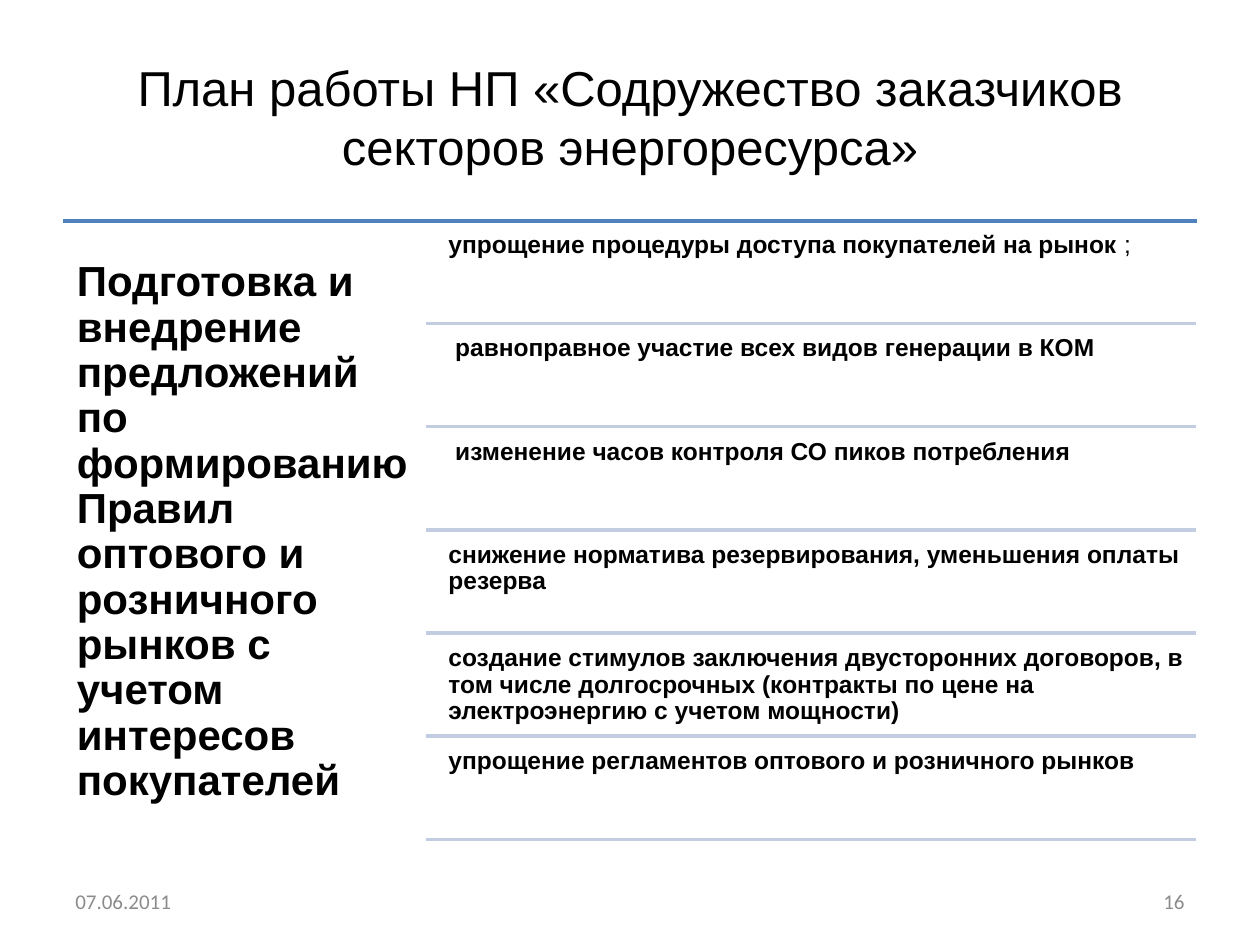
import pptx
import pptx.util
import pptx.dml.color
import pptx.enum.shapes
import pptx.enum.text
from lxml import etree

Cm = pptx.util.Cm
Pt = pptx.util.Pt
RGBColor = pptx.dml.color.RGBColor
PP_ALIGN = pptx.enum.text.PP_ALIGN
MSO_ANCHOR = pptx.enum.text.MSO_ANCHOR

BLACK = RGBColor(0x00, 0x00, 0x00)
GRAY = RGBColor(0x8C, 0x8C, 0x8C)
BLUE = RGBColor(0x4F, 0x81, 0xBD)
PALE_BLUE = RGBColor(0xC2, 0xCD, 0xE1)
DRAWING_NS = "http://schemas.openxmlformats.org/drawingml/2006/main"


def add_text(x, y, w, h, text, size, color=BLACK, font="Arial", bold=False,
             align=PP_ALIGN.LEFT, anchor=MSO_ANCHOR.MIDDLE, inset=(0.25, 0.13), spacing=None):
    sp = s.shapes.add_textbox(Cm(x), Cm(y), Cm(w), Cm(h))
    tf = sp.text_frame
    tf.word_wrap = True
    tf.vertical_anchor = anchor
    tf.margin_left = tf.margin_right = Cm(inset[0])
    tf.margin_top = tf.margin_bottom = Cm(inset[1])
    tf.text = text
    p = tf.paragraphs[0]
    p.alignment = align
    p.line_spacing = spacing
    r = p.runs[0]
    r.font.name = font
    r.font.size = Pt(size)
    r.font.bold = bold
    r.font.color.rgb = color
    return p


def add_rule(x1, x2, y, color):
    line = s.shapes.add_connector(pptx.enum.shapes.MSO_CONNECTOR.STRAIGHT,
                                  Cm(x1), Cm(y), Cm(x2), Cm(y))
    line.line.color.rgb = color
    line.line.width = Pt(2)
    etree.SubElement(line._element.spPr, "{%s}effectLst" % DRAWING_NS)


prs = pptx.Presentation()
prs.slide_width = Cm(25.4)
prs.slide_height = Cm(19.05)
s = prs.slides.add_slide(prs.slide_layouts[6])

add_text(1.27, 0.76, 22.86, 3.18, "План работы НП «Содружество заказчиков секторов энергоресурса»",
         28, align=PP_ALIGN.CENTER)
add_rule(1.27, 24.13, 4.45, BLUE)
add_text(1.3, 4.45, 7.32, 12.57,
         "Подготовка и внедрение предложений по формированию Правил оптового и "
         "розничного рынков с учетом интересов покупателей",
         24, bold=True, inset=(0.25, 0.25), spacing=0.9)

items = [
    "упрощение процедуры доступа покупателей на рынок ",
    " равноправное участие всех видов генерации в КОМ",
    " изменение часов контроля СО пиков потребления",
    "снижение норматива резервирования, уменьшения оплаты резерва",
    "создание стимулов заключения двусторонних договоров, в том числе долгосрочных "
    "(контракты по цене на электроэнергию с учетом мощности)",
    "упрощение регламентов оптового и розничного рынков",
]
top, pitch = 4.54, 2.08
for i, item in enumerate(items):
    y = top + i * pitch
    p = add_text(8.89, y, 15.24, 1.98, item, 14, bold=True, anchor=MSO_ANCHOR.TOP,
                 inset=(0.15, 0.15), spacing=0.9)
    if i == 0:
        r = p.add_run()
        r.text = ";"
        r.font.name = "Arial"
        r.font.size = Pt(14)
        r.font.color.rgb = BLACK
    add_rule(8.59, 24.1, y + 1.98, PALE_BLUE)

add_text(1.27, 17.65, 5.92, 1.02, "07.06.2011", 12, GRAY, "Calibri")
add_text(18.21, 17.65, 5.92, 1.02, "16", 12, GRAY, "Calibri", align=PP_ALIGN.RIGHT)

prs.save("out.pptx")
